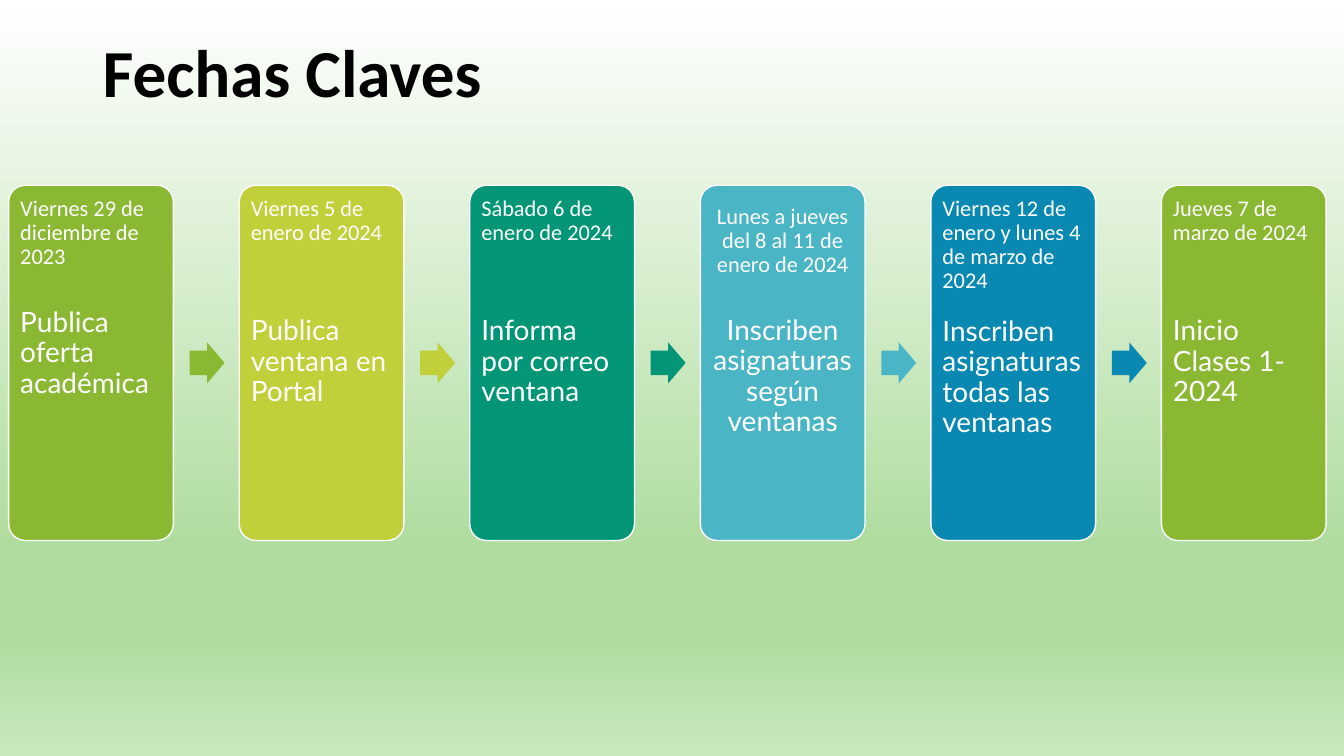
from dataclasses import dataclass

from lxml.etree import SubElement
from pptx import Presentation
from pptx.dml.color import RGBColor
from pptx.enum.shapes import MSO_SHAPE as Shape
from pptx.enum.text import MSO_ANCHOR as Anchor, PP_ALIGN as Align
from pptx.oxml.ns import qn
from pptx.util import Cm, Pt


@dataclass(frozen=True)
class Theme:
    white: str = "FFFFFF"
    black: str = "000000"
    green: str = "8AB833"
    lime: str = "C0CF3A"
    emerald: str = "029676"
    turquoise: str = "4AB5C4"
    blue: str = "0989B1"
    background: tuple = ((0, "FFFFFF"), (74, "AEDC9D"), (83, "AEDC9D"), (100, "C9E8BE"))
    title_size: int = 48
    date_size: int = 16
    event_size: int = 20
    title_font: str = "Calibri"
    event_font: str = "Lato"


@dataclass(frozen=True)
class Milestone:
    date: str
    event: str
    color: str
    gap: float  # points between date and event
    align: Align = Align.LEFT
    top_inset: float = 0.17


THEME = Theme()
MILESTONES = (
    Milestone("Viernes 29 de diciembre de 2023", "Publica oferta académica",
              THEME.green, 28),
    Milestone("Viernes 5 de enero de 2024", "Publica ventana en Portal",
              THEME.lime, 51),
    Milestone("Sábado 6 de enero de 2024", "Informa por correo ventana",
              THEME.emerald, 51),
    Milestone("Lunes a jueves del 8 al 11 de enero de 2024",
              "Inscriben asignaturas según ventanas",
              THEME.turquoise, 28, Align.CENTER, 0.37),
    Milestone("Viernes 12 de enero y lunes 4 de marzo de 2024",
              "Inscriben asignaturas todas las ventanas", THEME.blue, 17),
    Milestone("Jueves 7 de marzo de 2024", "Inicio Clases 1-2024",
              THEME.green, 51),
)
FIRST_LEFT, PITCH = 0.22, 5.81
CARD_TOP, CARD_WIDTH, CARD_HEIGHT = 4.67, 4.15, 8.95
ARROW_OFFSET, ARROW_WIDTH, ARROW_HEIGHT = 4.56, 0.88, 1.03


def apply_format(target, values):
    for name, value in values.items():
        setattr(target, name, value)


def set_background(slide):
    """Fill the slide with the vertical gradient of the theme."""
    fill = slide.background.fill
    fill.gradient()
    fill.gradient_angle = 270
    stops = slide.element.find(".//" + qn("a:gsLst"))
    for stop in list(stops):
        stops.remove(stop)
    for percent, color in THEME.background:
        stop = SubElement(stops, qn("a:gs"), pos=str(percent * 1000))
        SubElement(stop, qn("a:srgbClr"), val=color)


def write_paragraph(paragraph, text, size, font, color, bold=False,
                    align=Align.LEFT, before=0):
    apply_format(paragraph, {"text": text, "alignment": align, "line_spacing": 0.9})
    if before:
        paragraph.space_before = Pt(before)
    apply_format(paragraph.font, {"size": Pt(size), "name": font, "bold": bold})
    paragraph.font.color.rgb = RGBColor.from_string(color)


def add_title(slide, text):
    box = slide.shapes.add_textbox(Cm(2.34), Cm(0.51), Cm(29.21), Cm(2.79))
    frame = box.text_frame
    apply_format(frame, {"word_wrap": True, "vertical_anchor": Anchor.MIDDLE})
    write_paragraph(frame.paragraphs[0], text, THEME.title_size,
                    THEME.title_font, THEME.black, bold=True)


def add_block(slide, kind, left, top, width, height, color, adjustments):
    block = slide.shapes.add_shape(kind, Cm(left), Cm(top), Cm(width), Cm(height))
    block.shadow.inherit = False
    block.fill.solid()
    block.fill.fore_color.rgb = RGBColor.from_string(color)
    for index, value in enumerate(adjustments):
        block.adjustments[index] = value
    return block


def add_card(slide, left, milestone):
    card = add_block(slide, Shape.ROUNDED_RECTANGLE, left, CARD_TOP,
                     CARD_WIDTH, CARD_HEIGHT, milestone.color, (0.1,))
    card.line.color.rgb = RGBColor.from_string(THEME.white)
    card.line.width = Pt(1)
    frame = card.text_frame
    apply_format(frame, {
        "word_wrap": True, "vertical_anchor": Anchor.TOP,
        "margin_left": Cm(0.17), "margin_right": Cm(0.17),
        "margin_top": Cm(milestone.top_inset), "margin_bottom": Cm(0.17),
    })
    write_paragraph(frame.paragraphs[0], milestone.date, THEME.date_size,
                    THEME.title_font, THEME.white, align=milestone.align)
    write_paragraph(frame.add_paragraph(), milestone.event, THEME.event_size,
                    THEME.event_font, THEME.white, align=milestone.align,
                    before=milestone.gap)


def add_arrow(slide, card_left, color):
    top = CARD_TOP + (CARD_HEIGHT - ARROW_HEIGHT) / 2
    arrow = add_block(slide, Shape.RIGHT_ARROW, card_left + ARROW_OFFSET, top,
                      ARROW_WIDTH, ARROW_HEIGHT, color, (0.6, 0.5))
    arrow.line.fill.background()


def main():
    presentation = Presentation()
    apply_format(presentation, {"slide_width": Cm(33.87), "slide_height": Cm(19.05)})
    slide = presentation.slides.add_slide(presentation.slide_layouts[6])
    set_background(slide)
    add_title(slide, "Fechas Claves")
    for index, milestone in enumerate(MILESTONES):
        left = FIRST_LEFT + index * PITCH
        add_card(slide, left, milestone)
        if index < len(MILESTONES) - 1:
            add_arrow(slide, left, milestone.color)
    presentation.save("out.pptx")


if __name__ == "__main__":
    main()
